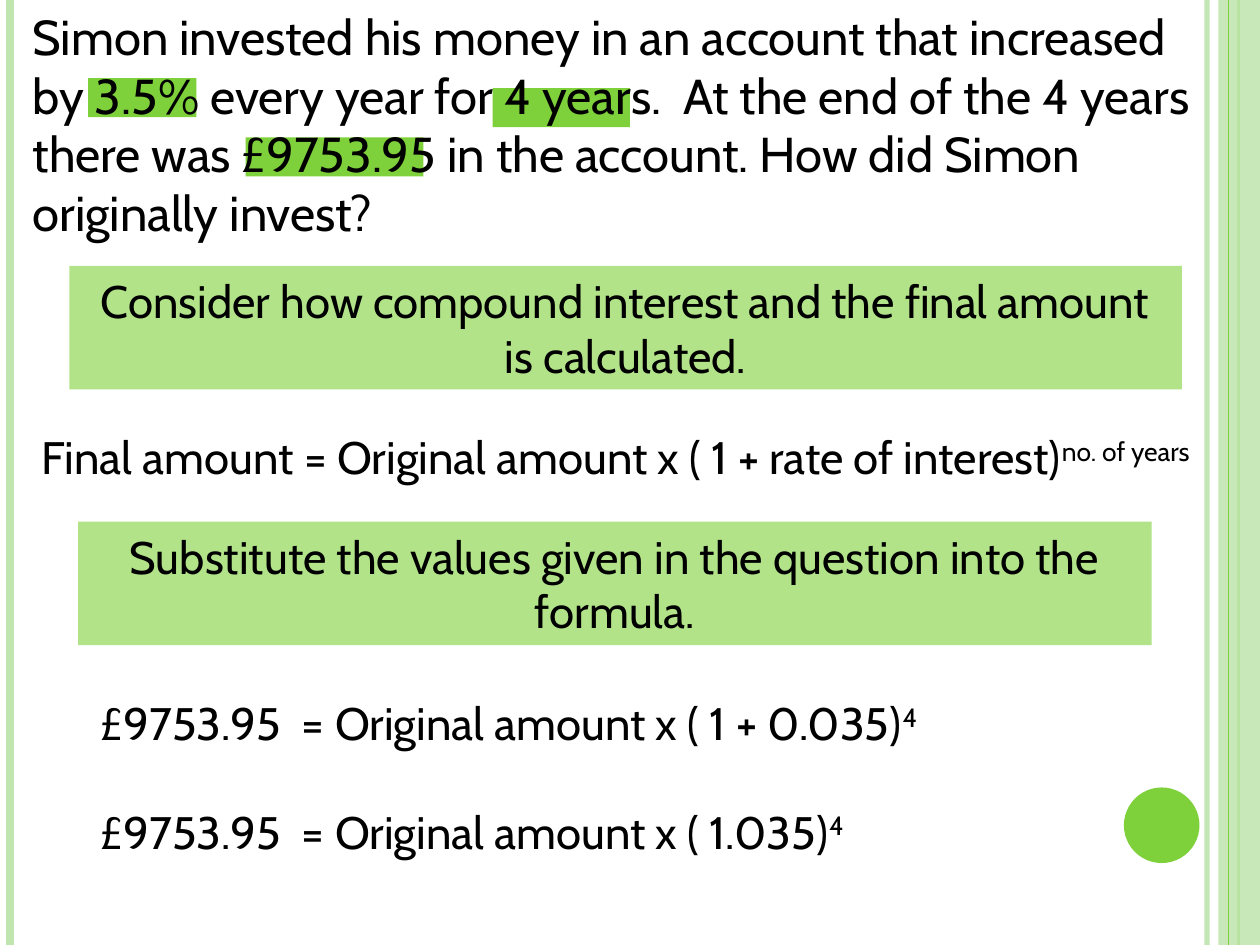
from typing import NamedTuple

from lxml.etree import SubElement
from pptx import Presentation
from pptx.dml.color import RGBColor
from pptx.enum.shapes import MSO_CONNECTOR, MSO_SHAPE
from pptx.enum.text import PP_ALIGN
from pptx.oxml.ns import qn
from pptx.util import Inches, Pt

HUES = {"pale": "C0E5AF", "green": "7FD13B", "ink": "000000"}
WIDE, HIGH = 10, 7.5
FRAME = {"word_wrap": True}
FONT = {"name": "Cabin"}


class Rule(NamedTuple):
    x: float
    hue: str
    width: float
    alpha: int = 100


class Block(NamedTuple):
    x: float
    y: float
    w: float
    h: float
    hue: str = "green"
    alpha: int = 100
    kind: MSO_SHAPE = MSO_SHAPE.RECTANGLE
    text: str = ""


class Note(NamedTuple):
    x: float
    y: float
    w: float
    h: float
    text: str
    power: str = ""
    size: int = 26


EDGES = [Rule(9.58, "pale", 3, 93), Rule(0.08, "pale", 4.5), Rule(9.83, "green", 1.5)]
BAND = Block(9.67, 0, 0.33, HIGH, "pale", 87)
INNER = Rule(9.75, "green", 0.75)
DISC = Block(8.92, 6.25, 0.6, 0.6, kind=MSO_SHAPE.OVAL)
MARKS = [Block(1.95, 1.09, 1.41, 0.31), Block(3.91, 0.7, 1.09, 0.31),
         Block(0.7, 0.62, 0.86, 0.31)]
HINTS = [
    Block(0.55, 2.11, 8.83, 0.98, alpha=60,
          text="Consider how compound interest and the final amount is calculated."),
    Block(0.62, 4.14, 8.52, 0.98, alpha=60,
          text="Substitute the values given in the question into the formula."),
]
TASK = Note(0.16, 0, 9.38, 1.99,
            "Simon invested his money in an account that increased by 3.5% every year "
            "for 4 years.  At the end of the 4 years there was £9753.95 in the account. "
            "How did Simon originally invest?", size=28)
RULE = Note(0.23, 3.36, 9.77, 0.54,
            "Final amount = Original amount x ( 1 + rate of interest)", "no. of years")
STEPS = [Note(0.7, y, 9.77, 0.54, f"£9753.95  = Original amount x ( {base})", "4")
         for y, base in ((5.47, "1 + 0.035"), (6.33, "1.035"))]


def apply(item, values: dict) -> None:
    """Set each named value on the item."""
    for name, value in values.items():
        setattr(item, name, value)


def tint(fill, hue: str, alpha: int) -> None:
    """Give a fill its solid colour and opacity."""
    fill.solid()
    fill.fore_color.rgb = RGBColor.from_string(HUES[hue])
    if alpha < 100:
        tone = fill._xPr.find(f"{qn('a:solidFill')}/{qn('a:srgbClr')}")
        SubElement(tone, qn("a:alpha"), val=str(alpha * 1000))


def write(frame, text: str, power: str = "", size: int = 26, align=PP_ALIGN.LEFT) -> None:
    """Fill a frame with text and an optional raised power."""
    apply(frame, FRAME)
    para = frame.paragraphs[0]
    para.alignment = align
    for part, rise in ((text, 0), (power, 30)):
        if part:
            run = para.add_run()
            run.text = part
            apply(run.font, FONT | {"size": Pt(size)})
            run.font.color.rgb = RGBColor.from_string(HUES["ink"])
            if rise:
                run.font._element.set("baseline", str(rise * 1000))


def draw_rule(slide, rule: Rule) -> None:
    """Draw one line down the full slide."""
    x = Inches(rule.x)
    line = slide.shapes.add_connector(MSO_CONNECTOR.STRAIGHT, x, 0, x, Inches(HIGH))
    line.line.width = Pt(rule.width)
    tint(line.line.fill, rule.hue, rule.alpha)
    SubElement(line._element.spPr, qn("a:effectLst"))


def draw_block(slide, block: Block) -> None:
    """Draw one flat shape with any centred text."""
    shape = slide.shapes.add_shape(block.kind, *map(Inches, block[:4]))
    shape.shadow.inherit = False
    shape.line.fill.background()
    tint(shape.fill, block.hue, block.alpha)
    if block.text:
        write(shape.text_frame, block.text, align=PP_ALIGN.CENTER)


def draw_note(slide, note: Note) -> None:
    """Draw one text box."""
    box = slide.shapes.add_textbox(*map(Inches, note[:4]))
    write(box.text_frame, note.text, note.power, note.size)


def main() -> None:
    """Build and save the slide."""
    deck = Presentation()
    apply(deck, {"slide_width": Inches(WIDE), "slide_height": Inches(HIGH)})
    slide = deck.slides.add_slide(deck.slide_layouts[6])
    for edge in EDGES:
        draw_rule(slide, edge)
    draw_block(slide, BAND)
    draw_rule(slide, INNER)
    for block in (DISC, *MARKS):
        draw_block(slide, block)
    for note in (TASK, RULE):
        draw_note(slide, note)
    for hint in HINTS:
        draw_block(slide, hint)
    for step in STEPS:
        draw_note(slide, step)
    deck.save("out.pptx")


if __name__ == "__main__":
    main()
